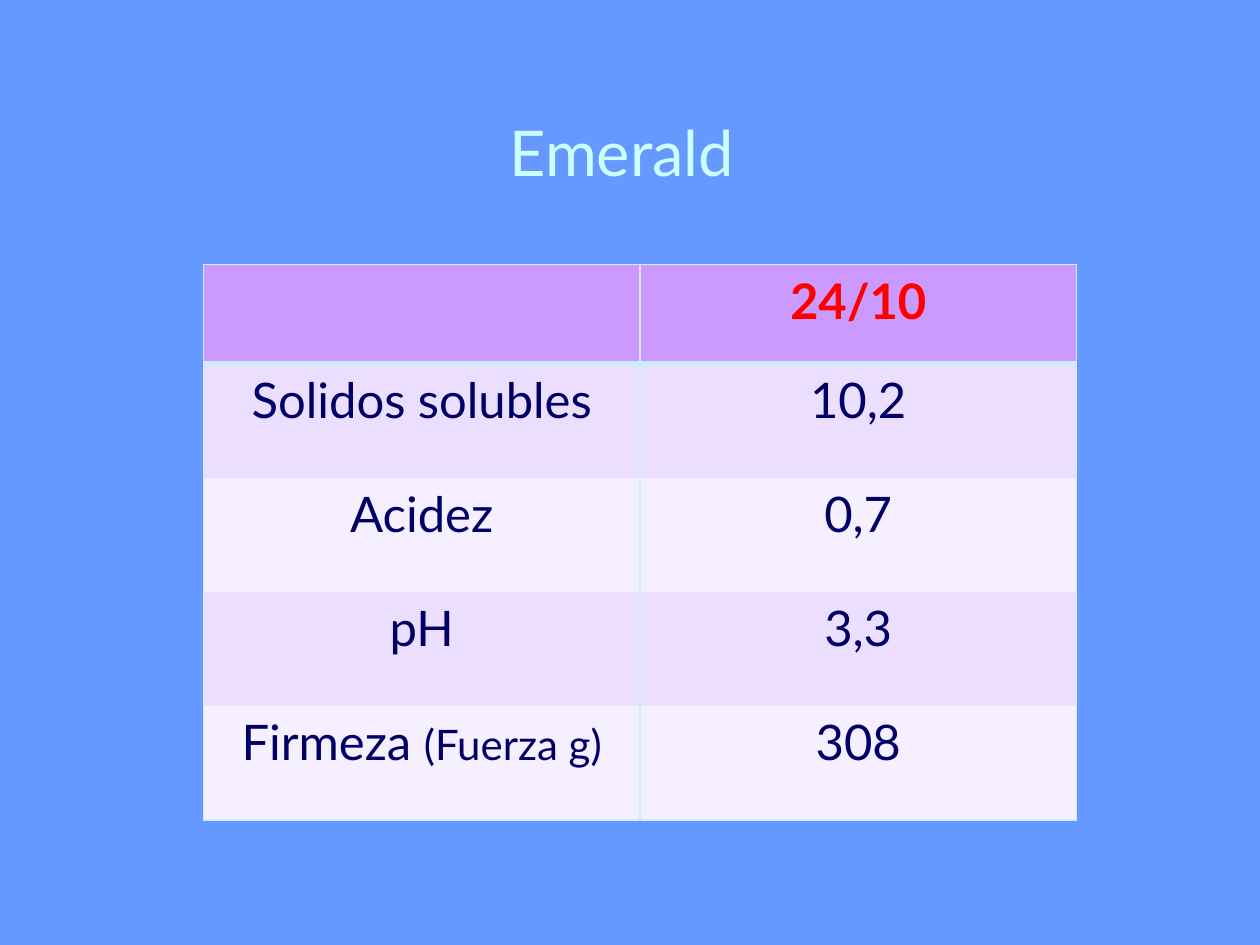
from lxml import etree
from pptx import Presentation
from pptx.dml.color import RGBColor
from pptx.enum import text
from pptx.oxml import ns
from pptx.util import Cm, Pt

SKY = RGBColor(0x66, 0x99, 0xFF)
ICE = RGBColor(0xCC, 0xFF, 0xFF)
BORDER = RGBColor(0xCC, 0xEC, 0xFF)
PURPLE = RGBColor(0xCC, 0x99, 0xFF)
LILAC = RGBColor(0xEC, 0xDE, 0xFF)
PALE_LILAC = RGBColor(0xF6, 0xEF, 0xFF)
RED = RGBColor(0xFF, 0x00, 0x00)
NAVY = RGBColor(0x00, 0x00, 0x66)


def add_run(paragraph, wording, size, color, bold=False):
    run = paragraph.add_run()
    run.text = wording
    run.font.name = "Lato"
    run.font.size = Pt(size)
    run.font.bold = bold
    run.font.color.rgb = color


def set_border(cell, side, width):
    """Draw one side (L, R, T or B) in points; a width of 0 hides it."""
    line = etree.SubElement(cell._tc.get_or_add_tcPr(), ns.qn(f"a:ln{side}"), w=str(Pt(width)))
    if width:
        fill = etree.SubElement(line, ns.qn("a:solidFill"))
        etree.SubElement(fill, ns.qn("a:srgbClr"), val=str(BORDER))
    else:
        etree.SubElement(line, ns.qn("a:noFill"))


prs = Presentation()
prs.slide_width, prs.slide_height = Cm(25.4), Cm(19.05)
slide = prs.slides.add_slide(prs.slide_layouts[5])
slide.background.fill.solid()
slide.background.fill.fore_color.rgb = SKY

title = slide.shapes.title
title.left, title.top, title.width, title.height = Cm(1.27), Cm(0.76), Cm(22.86), Cm(3.18)
title.text_frame.vertical_anchor = text.MSO_ANCHOR.BOTTOM
heading = title.text_frame.paragraphs[0]
heading.alignment = text.PP_ALIGN.CENTER
add_run(heading, "Emerald ", 36, ICE)

# Each cell is a list of (wording, size) runs
measurements = [
    [[], [("24/10", 28)]],
    [[("Solidos solubles", 28)], [("10,2", 28)]],
    [[("Acidez", 28)], [("0,7", 28)]],
    [[("pH", 28)], [("3,3", 28)]],
    [[("Firmeza ", 28), ("(Fuerza g)", 24)], [("308", 28)]],
]
last = len(measurements) - 1
table = slide.shapes.add_table(len(measurements), 2, Cm(4.1), Cm(5.33), Cm(17.6), Cm(11.2)).table
for column in table.columns:
    column.width = Cm(8.8)

for r, row in enumerate(measurements):
    is_header = r == 0
    table.rows[r].height = Cm(2) if is_header else Cm(2.3)
    top = {0: 1, 1: 3}.get(r, 0)
    bottom = {0: 3, last: 1}.get(r, 0)
    for c, runs in enumerate(row):
        cell = table.cell(r, c)
        for side, width in zip("LRTB", (1, 1, top, bottom)):
            set_border(cell, side, width)
        cell.fill.solid()
        cell.fill.fore_color.rgb = PURPLE if is_header else (PALE_LILAC, LILAC)[r % 2]
        paragraph = cell.text_frame.paragraphs[0]
        paragraph.alignment = text.PP_ALIGN.CENTER
        for wording, size in runs:
            add_run(paragraph, wording, size, RED if is_header else NAVY, is_header)

prs.save("out.pptx")
